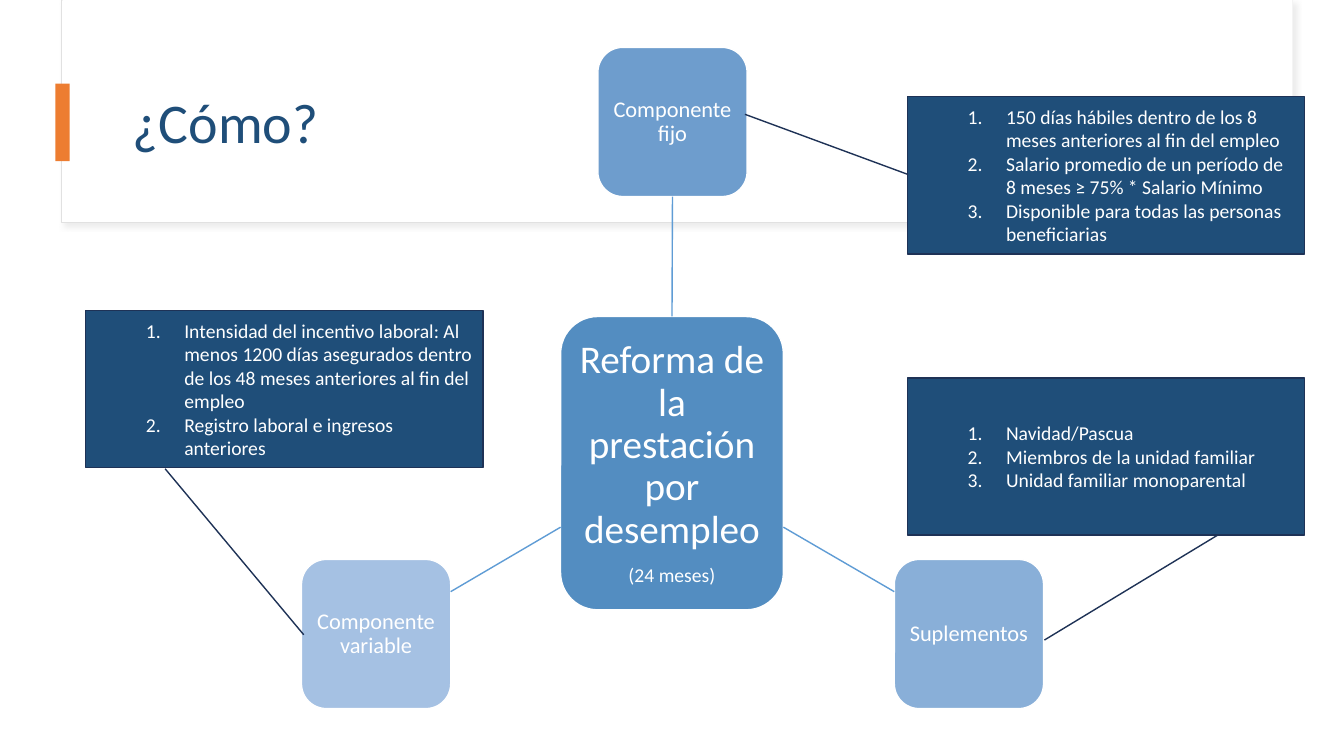
from dataclasses import dataclass

from lxml import etree
from pptx import Presentation
from pptx.dml.color import RGBColor
from pptx.enum.shapes import MSO_CONNECTOR, MSO_SHAPE
from pptx.enum.text import MSO_ANCHOR, PP_ALIGN
from pptx.oxml.ns import qn
from pptx.util import Inches, Pt

RECTANGLE = MSO_SHAPE.RECTANGLE
ROUNDED = MSO_SHAPE.ROUNDED_RECTANGLE
CALLOUT = MSO_SHAPE.LINE_CALLOUT_1
STRAIGHT = MSO_CONNECTOR.STRAIGHT
MIDDLE = MSO_ANCHOR.MIDDLE
LEFT, CENTER = PP_ALIGN.LEFT, PP_ALIGN.CENTER
TOP_SIDE, BOTTOM_SIDE = 0, 2


@dataclass(frozen=True)
class Theme:
    font: str = "Calibri"
    white: str = "FFFFFF"
    navy: str = "1F4E79"
    navy_edge: str = "1E3256"
    accent: str = "ED7D31"
    panel_edge: str = "E1E1E1"
    panel_shadow: str = "D9D9D9"
    hub: str = "538DC1"
    fixed: str = "6E9DCD"
    supplement: str = "89AFD8"
    variable: str = "A5C1E3"
    spoke: str = "5F9CD5"
    title_size: int = 40
    hub_size: int = 28
    node_size: int = 16
    note_size: int = 14


THEME = Theme()
NODE_SIDE = 1.48
NOTE_SIZE = (3.94, 1.56)

# Notes: left, top, callout adjustments, numbered items
NOTES = [
    (9, 0.96, (0.495, 0.002, 0.112, -0.409), [
        "150 días hábiles dentro de los 8 meses anteriores al fin del empleo",
        "Salario promedio de un período de 8 meses ≥ 75% * Salario Mínimo",
        "Disponible para todas las personas beneficiarias"]),
    (0.85, 3.08, (2.063, 0.549, 1.007, 0.2), [
        "Intensidad del incentivo laboral: Al menos 1200 días asegurados "
        "dentro de los 48 meses anteriores al fin del empleo",
        "Registro laboral e ingresos anteriores"]),
    (9, 3.75, (0.998, 0.782, 1.667, 0.345), [
        "Navidad/Pascua",
        "Miembros de la unidad familiar",
        "Unidad familiar monoparental"]),
]


def color(value):
    return RGBColor.from_string(value)


def add_box(page, kind, place, fill, line=None, width=1):
    box = page.shapes.add_shape(kind, *(Inches(value) for value in place))
    box.shadow.inherit = False
    box.fill.solid()
    box.fill.fore_color.rgb = color(fill)
    if line:
        box.line.color.rgb = color(line)
        box.line.width = Pt(width)
    else:
        box.line.fill.background()
    return box


def write(box, lines, align, ink=THEME.white):
    """Fill a box with (text, size) lines."""
    frame = box.text_frame
    frame.word_wrap = True
    frame.vertical_anchor = MIDDLE
    frame.text = "\n".join(text for text, size in lines)
    for para, (text, size) in zip(frame.paragraphs, lines):
        para.alignment = align
        font = para.runs[0].font
        font.name, font.size = THEME.font, Pt(size)
        font.color.rgb = color(ink)
    return frame


def add_shadow(box):
    effects = box._element.spPr.find(qn("a:effectLst"))
    shadow = etree.SubElement(effects, qn("a:outerShdw"), blurRad=str(Pt(4)),
                              dist=str(Pt(3)), dir=str(45 * 60000))
    tint = etree.SubElement(shadow, qn("a:srgbClr"), val=THEME.panel_shadow)
    etree.SubElement(tint, qn("a:alpha"), val="50000")


def add_title(page, text):
    panel = add_box(page, RECTANGLE, (0.61, 0, 12.21, 2.21), THEME.white,
                    THEME.panel_edge, 0.75)
    add_shadow(panel)
    add_box(page, RECTANGLE, (0.62, 0, 12.2, 2.2), THEME.white)
    title = page.shapes.add_textbox(Inches(1.22), Inches(0.6), Inches(11.12), Inches(1.29))
    frame = write(title, [(text, THEME.title_size)], LEFT, THEME.navy)
    frame.paragraphs[0].line_spacing = 0.9
    add_box(page, RECTANGLE, (0.55, 0.83, 0.14, 0.77), THEME.accent)


def add_node(page, place, fill, lines, margin=0.04):
    node = add_box(page, ROUNDED, place, fill, THEME.white)
    frame = write(node, lines, CENTER)
    frame.margin_left = frame.margin_right = Inches(margin)
    frame.margin_top = frame.margin_bottom = Inches(margin)
    for para, (text, size) in zip(frame.paragraphs, lines):
        para.line_spacing = 0.9
        para.space_after = Pt(round(size * 0.35, 1))
    return node


def add_component(page, left, top, fill, text):
    return add_node(page, (left, top, NODE_SIDE, NODE_SIDE), fill,
                    [(text, THEME.node_size)])


def add_spoke(page, *ends):
    spoke = page.shapes.add_connector(STRAIGHT, *(Inches(value) for value in ends))
    spoke.line.color.rgb = color(THEME.spoke)
    spoke.line.width = Pt(1)
    etree.SubElement(spoke._element.spPr, qn("a:effectLst"))
    return spoke


def add_note(page, left, top, adjustments, items):
    note = add_box(page, CALLOUT, (left, top, *NOTE_SIZE), THEME.navy, THEME.navy_edge)
    for index, value in enumerate(adjustments):
        note.adjustments[index] = value
    frame = write(note, [(item, THEME.note_size) for item in items], LEFT)
    for para in frame.paragraphs:
        para.level = 1
        properties = para._p.get_or_add_pPr()
        properties.set("marL", str(Inches(0.88)))
        properties.set("indent", str(Inches(-0.38)))
        etree.SubElement(properties, qn("a:buAutoNum"), type="arabicPeriod")


def main():
    deck = Presentation()
    deck.slide_width, deck.slide_height = Inches(13.33), Inches(7.5)
    page = deck.slides.add_slide(deck.slide_layouts[6])

    add_title(page, "¿Cómo?")

    # Hub and its three components
    hub = add_node(page, (5.56, 3.14, 2.21, 2.91), THEME.hub,
                   [("Reforma de la prestación por desempleo", THEME.hub_size),
                    ("(24 meses)", THEME.note_size)], margin=0.08)
    fixed = add_component(page, 5.93, 0.47, THEME.fixed, "Componente fijo")
    add_component(page, 8.87, 5.55, THEME.supplement, "Suplementos")
    add_component(page, 2.99, 5.55, THEME.variable, "Componente variable")

    # Spokes
    upright = add_spoke(page, 6.67, 3.14, 6.67, 1.95)
    upright.begin_connect(hub, TOP_SIDE)
    upright.end_connect(fixed, BOTTOM_SIDE)
    add_spoke(page, 7.77, 5.23, 8.87, 5.87)
    add_spoke(page, 5.56, 5.23, 4.47, 5.87)

    # Numbered notes with leader lines
    for note in NOTES:
        add_note(page, *note)

    deck.save("out.pptx")


if __name__ == "__main__":
    main()
